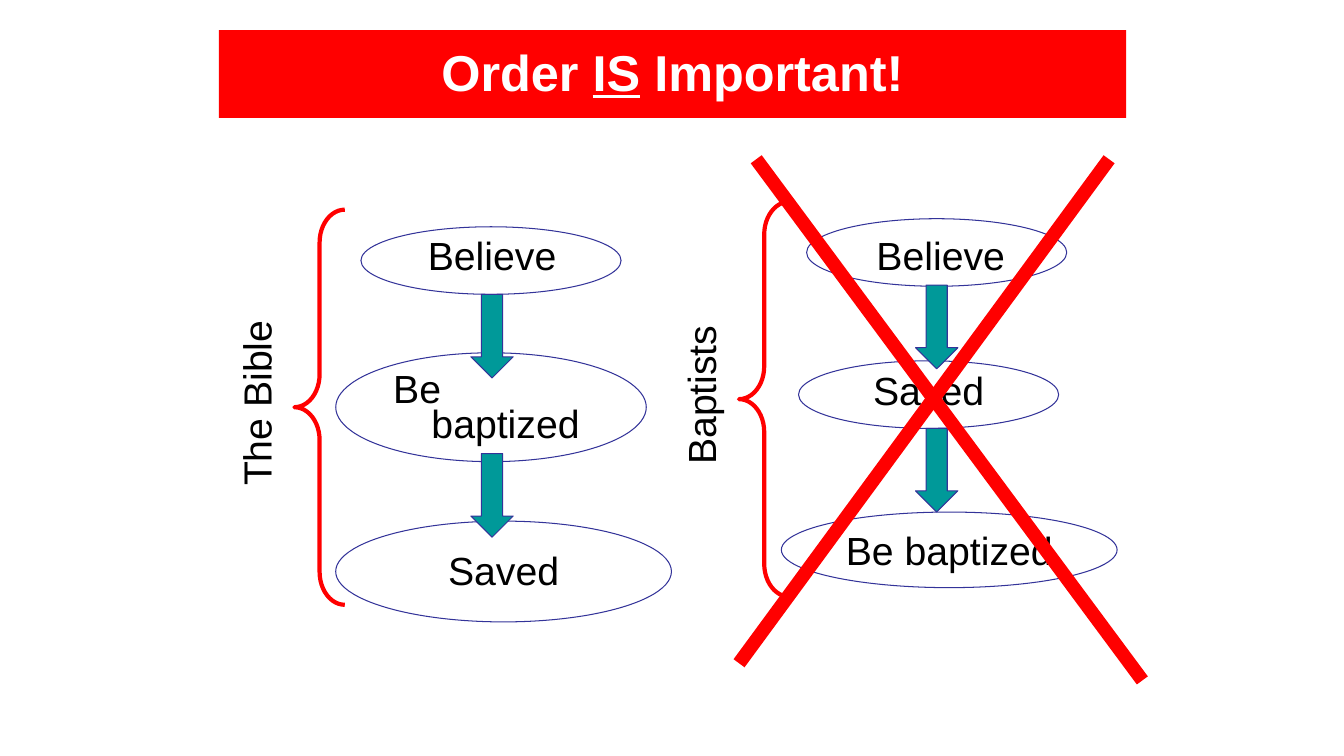
from lxml.etree import SubElement
from pptx import Presentation
from pptx.dml.color import RGBColor
from pptx.enum.shapes import MSO_CONNECTOR, MSO_SHAPE
from pptx.enum.text import MSO_ANCHOR, MSO_AUTO_SIZE, PP_ALIGN
from pptx.oxml.ns import qn
from pptx.util import Inches, Pt

RED, TEAL, NAVY, BLACK, WHITE = "FF0000", "009999", "333399", "000000", "FFFFFF"
TITLE = [("Order ", False), ("IS", True), (" Important!", False)]

# Boxes are (left, top, width, height) in inches.
PANELS = [
    {
        "label": "Baptists", "label_width": 1.59, "brace": (7.33, 2),
        "steps": [("Believe", (7.83, 2.25, 3, 0.57), (8, 2.17, 2.58, 0.67)),
                  ("Saved", (7, 3.58, 4.42, 0.58), (7.92, 3.58, 2.58, 0.67)),
                  ("Be baptized", (7.75, 5.17, 3.33, 0.57), (7.75, 5.08, 3.33, 0.75))],
        "arrows": [(9.08, 2.83), (9.08, 4.25)],
    },
    {
        "label": "The Bible", "label_width": 1.85, "brace": (2.92, 2.08),
        "steps": [("Believe", (2.67, 2.25, 4.42, 0.58), (3.58, 2.25, 2.58, 0.67)),
                  ("Be baptized", (3.33, 3.67, 3, 0.8), (3.33, 3.5, 3.08, 1.08)),
                  ("Saved", (3.33, 5.37, 3.33, 0.57), (3.33, 5.17, 3.33, 1))],
        "arrows": [(4.67, 2.92), (4.67, 4.5)],
    },
]
STAGGERED_STEP = ("The Bible", "Be baptized")
CROSS = [((7.33, 6.58), (11, 1.58)), ((7.5, 1.58), (11.33, 6.75))]
BRACE_SIZE = (0.5, 3.92)
ARROW_SIZE = (0.42, 0.83)
LABEL_HEIGHT = 0.57
LABEL_GAP = 0.38  # from the brace's left edge to the label's centre


def color(hex_value):
    return RGBColor.from_string(hex_value)


def add_shape(kind, box, fill=None, line=None, line_width=0.75):
    shape = slide.shapes.add_shape(kind, *map(Inches, box))
    shape.shadow.inherit = False
    if fill:
        shape.fill.solid()
        shape.fill.fore_color.rgb = color(fill)
    else:
        shape.fill.background()
    if line:
        shape.line.color.rgb = color(line)
        shape.line.width = Pt(line_width)
    else:
        shape.line.fill.background()
    return shape


def add_run(paragraph, text, size, hex_value):
    run = paragraph.add_run()
    run.text = text
    run.font.name = "Arial"
    run.font.size = Pt(size)
    run.font.color.rgb = color(hex_value)
    return run


def add_text(text, box, wrap=True):
    text_box = slide.shapes.add_textbox(*map(Inches, box))
    text_box.text_frame.word_wrap = wrap
    text_box.text_frame.auto_size = MSO_AUTO_SIZE.NONE
    paragraph = text_box.text_frame.paragraphs[0]
    paragraph.alignment = PP_ALIGN.CENTER
    add_run(paragraph, text, 28, BLACK)
    return text_box


def stagger(text_box):
    """Wrap the text onto two tight lines, the second one indented."""
    frame = text_box.text_frame
    frame.margin_left, frame.margin_right = Inches(0.57), Inches(0.53)
    paragraph = frame.paragraphs[0]
    paragraph.alignment = PP_ALIGN.LEFT
    paragraph.line_spacing = 0.75
    properties = paragraph._p.get_or_add_pPr()
    properties.set("marL", str(Inches(0.38)))
    properties.set("indent", str(Inches(-0.38)))


def add_panel(panel):
    for text, text_area, ellipse in panel["steps"]:
        text_box = add_text(text, text_area)
        if (panel["label"], text) == STAGGERED_STEP:
            stagger(text_box)
        add_shape(MSO_SHAPE.OVAL, ellipse, line=NAVY)
    for position in panel["arrows"]:
        add_shape(MSO_SHAPE.DOWN_ARROW, position + ARROW_SIZE, TEAL, NAVY)

    brace = add_shape(MSO_SHAPE.LEFT_BRACE, panel["brace"] + BRACE_SIZE, line=RED, line_width=3)
    brace.adjustments[0] = 0.653
    left, top = panel["brace"]
    width = panel["label_width"]
    center_x, center_y = left - LABEL_GAP, top + BRACE_SIZE[1] / 2 - 0.04
    label_box = (center_x - width / 2, center_y - LABEL_HEIGHT / 2, width, LABEL_HEIGHT)
    add_text(panel["label"], label_box, wrap=False).rotation = 270


presentation = Presentation()
presentation.slide_width, presentation.slide_height = Inches(13.33), Inches(7.5)
slide = presentation.slides.add_slide(presentation.slide_layouts[6])

banner = add_shape(MSO_SHAPE.RECTANGLE, (2.17, 0.3, 9, 0.87), RED)
banner.text_frame.vertical_anchor = MSO_ANCHOR.MIDDLE
heading = banner.text_frame.paragraphs[0]
heading.alignment = PP_ALIGN.CENTER
heading.line_spacing = 0.95
for text, underlined in TITLE:
    run = add_run(heading, text, 36, WHITE)
    run.font.bold = True
    run.font.underline = underlined

for panel in PANELS:
    add_panel(panel)

for start, end in CROSS:
    stroke = slide.shapes.add_connector(MSO_CONNECTOR.STRAIGHT, *map(Inches, start + end))
    stroke.line.color.rgb = color(RED)
    stroke.line.width = Pt(9.75)
    SubElement(stroke._element.spPr, qn("a:effectLst"))

presentation.save("out.pptx")
